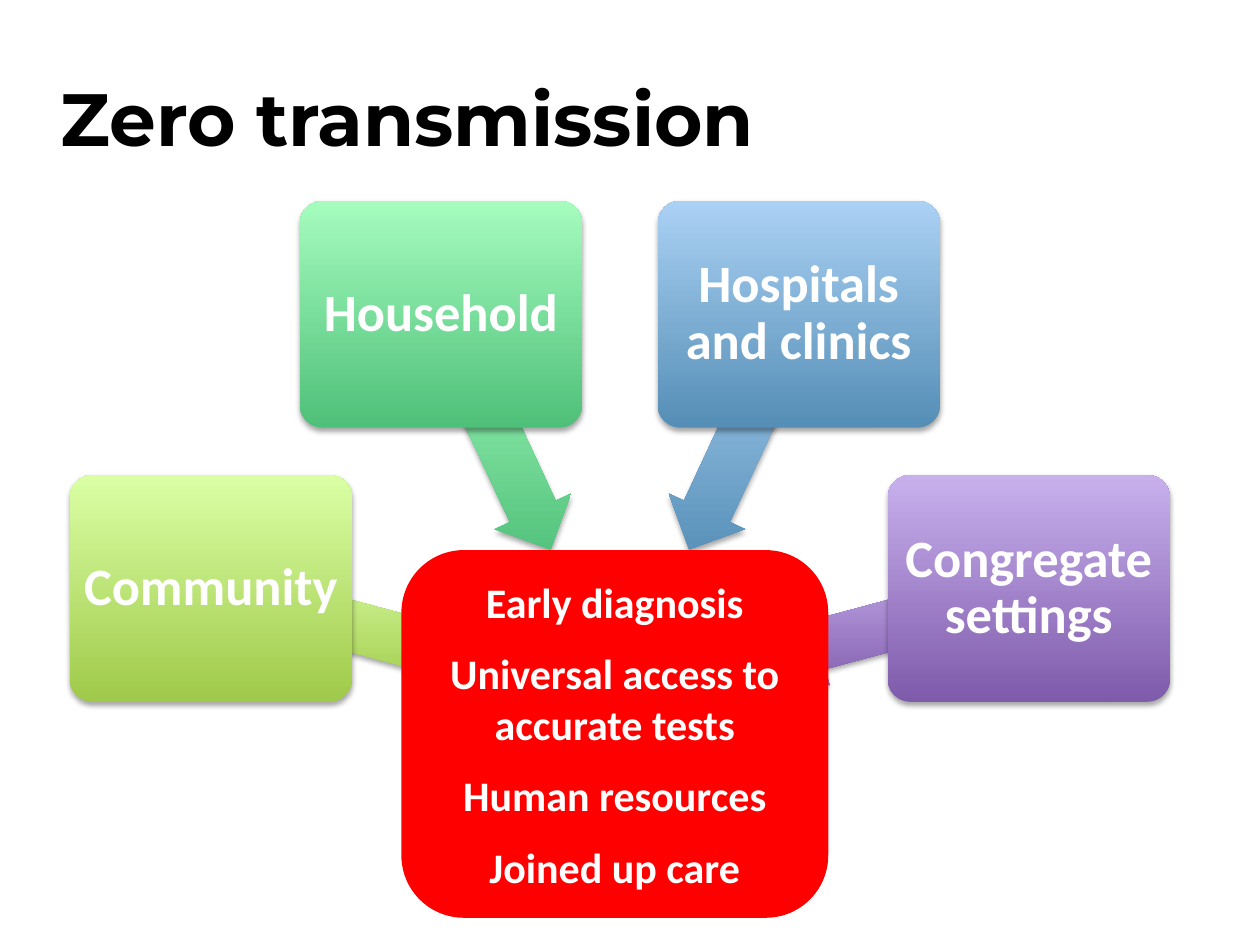
from math import cos, radians, sin

from lxml import etree
from pptx import Presentation
from pptx.dml.color import RGBColor
from pptx.enum.shapes import MSO_SHAPE
from pptx.enum.text import MSO_ANCHOR, MSO_AUTO_SIZE, PP_ALIGN
from pptx.oxml.ns import qn
from pptx.util import Inches, Pt

ROUND, ARROW = MSO_SHAPE.ROUNDED_RECTANGLE, MSO_SHAPE.LEFT_ARROW
LEFT, CENTER = PP_ALIGN.LEFT, PP_ALIGN.CENTER
MIDDLE, NO_FIT = MSO_ANCHOR.MIDDLE, MSO_AUTO_SIZE.NONE
BLACK, WHITE = RGBColor(0, 0, 0), RGBColor(255, 255, 255)
RED = RGBColor(255, 0, 0)

# Content: settings around the hub as label, angle, dark and light colour
TITLE = "Zero transmission"
SETTINGS = [
    ("Community", 195, RGBColor(0xA0, 0xCA, 0x4A), RGBColor(0xDA, 0xFF, 0xA5)),
    ("Household", 245, RGBColor(0x4F, 0xC0, 0x79), RGBColor(0xA5, 0xFC, 0xBE)),
    ("Hospitals and clinics", 295, RGBColor(0x55, 0x8E, 0xB6), RGBColor(0xAB, 0xD1, 0xF4)),
    ("Congregate settings", 345, RGBColor(0x7F, 0x5B, 0xAB), RGBColor(0xC8, 0xB0, 0xED)),
]
ACTIONS = ["Early diagnosis", "Universal access to accurate tests",
           "Human resources", "Joined up care"]

# Layout in inches: both rings share one centre
HUB = (4.92, 5.54)
ARROW_RING, CARD_RING = 2.33, 3.36
ARROW_SIZE, CARD_SIZE = (2.06, 0.67), (2.24, 1.8)


def write(shape, lines, font="Calibri", size=24, color=WHITE, align=CENTER,
          inset=0.1, gap=0, leading=1.0):
    frame = shape.text_frame
    frame.auto_size, frame.word_wrap = NO_FIT, True
    frame.vertical_anchor = MIDDLE
    frame.margin_left = frame.margin_right = Inches(inset)
    frame.margin_top = frame.margin_bottom = Inches(0.05)
    for i, line in enumerate(lines):
        para = frame.paragraphs[0] if i == 0 else frame.add_paragraph()
        para.alignment, para.line_spacing = align, leading
        para.space_before = Pt(gap if i else 0)
        run = para.add_run()
        run.text = line
        run.font.name, run.font.size = font, Pt(size)
        run.font.bold, run.font.color.rgb = True, color


def shade(shape, dark, light):
    """Vertical gradient that stays upright, with a soft shadow below."""
    shape.line.fill.background()
    shape.fill.gradient()
    shape.fill.gradient_angle = 90
    for stop, color, pos in zip(shape.fill.gradient_stops, (dark, light), (0, 1)):
        stop.color.rgb, stop.position = color, pos
    props = shape._element.spPr
    props.find(qn("a:gradFill")).set("rotWithShape", "0")
    shape.shadow.inherit = False
    drop = etree.SubElement(props.find(qn("a:effectLst")), qn("a:outerShdw"),
                            blurRad=str(Pt(3.1)), dist=str(Pt(1.8)),
                            dir="5400000", rotWithShape="0")
    tone = etree.SubElement(drop, qn("a:srgbClr"), val="000000")
    etree.SubElement(tone, qn("a:alpha"), val="35000")


def orbit(slide, kind, ring, angle, size):
    """Add a shape centred on a ring around the hub."""
    x = HUB[0] + ring * cos(radians(angle)) - size[0] / 2
    y = HUB[1] + ring * sin(radians(angle)) - size[1] / 2
    return slide.shapes.add_shape(kind, *map(Inches, (x, y, *size)))


def main():
    deck = Presentation()
    deck.slide_width, deck.slide_height = Inches(10), Inches(7.5)
    slide = deck.slides.add_slide(deck.slide_layouts[5])

    # Title
    title = slide.shapes.title
    title.left, title.top, title.width, title.height = map(
        Inches, (0.38, 0.3, 6.64, 1.25))
    write(title, [TITLE], font="Montserrat", size=42.3, color=BLACK, align=LEFT)

    # Arrows and cards
    for label, angle, dark, light in SETTINGS:
        arrow = orbit(slide, ARROW, ARROW_RING, angle, ARROW_SIZE)
        arrow.rotation = angle
        arrow.adjustments[0], arrow.adjustments[1] = 0.6, 0.5
        shade(arrow, dark, light)
        card = orbit(slide, ROUND, CARD_RING, angle, CARD_SIZE)
        card.adjustments[0] = 0.1
        shade(card, dark, light)
        write(card, [label], size=30, inset=0.05, leading=0.9)

    # Central actions
    hub = slide.shapes.add_shape(ROUND, *map(Inches, (3.2, 4.38, 3.36, 2.89)))
    hub.shadow.inherit = False
    hub.fill.solid()
    hub.fill.fore_color.rgb = hub.line.color.rgb = RED
    hub.line.width = Pt(2)
    write(hub, ACTIONS, gap=12)

    deck.save("out.pptx")


if __name__ == "__main__":
    main()
